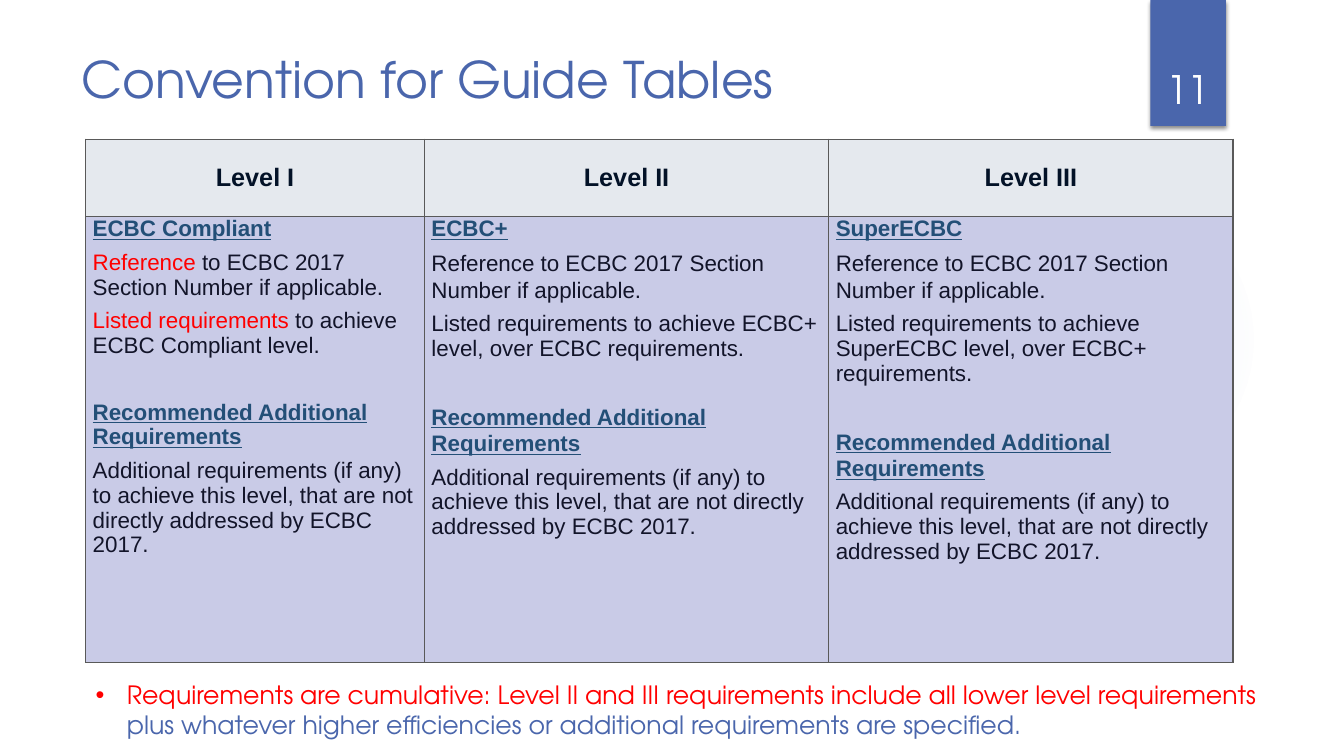
from lxml import etree
from pptx import Presentation
from pptx.dml.color import RGBColor
from pptx.enum.shapes import MSO_SHAPE
from pptx.enum.text import MSO_ANCHOR, PP_ALIGN
from pptx.oxml import parse_xml
from pptx.oxml.ns import qn
from pptx.util import Inches, Pt

RECT, OVAL = MSO_SHAPE.RECTANGLE, MSO_SHAPE.OVAL
MIDDLE, TOP, BOTTOM = MSO_ANCHOR.MIDDLE, MSO_ANCHOR.TOP, MSO_ANCHOR.BOTTOM
CENTER, LEFT = PP_ALIGN.CENTER, PP_ALIGN.LEFT
NS = 'xmlns:a="http://schemas.openxmlformats.org/drawingml/2006/main"'
THEME = {
    "display": "TeX Gyre Adventor", "body": "Arial",
    "title": 36, "number": 28, "head": 18, "note": 18, "cell": 16,
    "blue": "4A66AC", "white": "FFFFFF", "red": "FF0000", "glow": "5C64B7",
    "head_text": "031227", "section": "234F77", "ink": "121429",
    "head_fill": "E5E9EE", "cell_fill": "C9CBE7", "border": "595959",
}


def add_run(p, text, size, color, font="body", heading=False, underline=False):
    r = p.add_run()
    r.text = text
    r.font.size = Pt(THEME[size])
    r.font.name = THEME[font]
    r.font.bold = heading
    r.font.underline = underline
    r.font.color.rgb = RGBColor.from_string(THEME[color])


def add_box(s, left, top, width, height, anchor):
    tf = s.shapes.add_textbox(*map(Inches, (left, top, width, height))).text_frame
    tf.word_wrap = True
    tf.vertical_anchor = anchor
    return tf.paragraphs[0]


prs = Presentation()
prs.slide_width, prs.slide_height = Inches(13.33), Inches(7.5)
s = prs.slides.add_slide(prs.slide_layouts[6])

glow = s.shapes.add_shape(OVAL, *map(Inches, (9.41, 1.83, 3.08, 3.08)))
glow.shadow.inherit = False
glow.line.fill.background()
stops = "".join(
    f'<a:gs pos="{pos * 1000}"><a:srgbClr val="{THEME["glow"]}">'
    f'<a:alpha val="{alpha * 1000}"/></a:srgbClr></a:gs>'
    for pos, alpha in ((0, 7), (36, 6), (69, 0)))
glow._element.spPr.insert(2, parse_xml(
    f'<a:gradFill {NS}><a:gsLst>{stops}</a:gsLst><a:path path="circle">'
    '<a:fillToRect l="50000" t="50000" r="50000" b="50000"/></a:path></a:gradFill>'))

tab = s.shapes.add_shape(RECT, *map(Inches, (11.41, 0, 0.75, 1.25)))
tab.fill.solid()
tab.fill.fore_color.rgb = RGBColor.from_string(THEME["blue"])
tab.line.fill.background()
tab.shadow.inherit = False
tab._element.spPr.find(qn("a:effectLst")).append(parse_xml(
    f'<a:outerShdw {NS} blurRad="{Pt(3)}" dist="{Pt(2)}" dir="5400000" rotWithShape="0">'
    '<a:srgbClr val="000000"><a:alpha val="45000"/></a:srgbClr></a:outerShdw>'))

p = add_box(s, 0.71, 0.43, 10.29, 1.83, TOP)
add_run(p, "Convention for Guide Tables", "title", "blue", "display")
p = add_box(s, 11.32, 0.32, 0.92, 0.84, BOTTOM)
p.alignment = CENTER
add_run(p, "11", "number", "white", "display")

REFERENCE = ("Reference", " to ECBC 2017 Section Number if applicable.")
LISTED = "Listed requirements "
levels = [
    ("Level I", "ECBC Compliant", "to achieve ECBC Compliant level.", "red", 1.0),
    ("Level II", "ECBC+", "to achieve ECBC+ level, over ECBC requirements.", "ink", 1.07),
    ("Level III", "SuperECBC",
     "to achieve SuperECBC level, over ECBC+ requirements.", "ink", 1.07),
]
col_widths, row_heights = (3.36, 4.01, 4.01), (0.77, 4.42)
table = s.shapes.add_table(
    2, 3, Inches(0.85), Inches(1.38),
    Inches(sum(col_widths)), Inches(sum(row_heights))).table
table.first_row = table.horz_banding = False
for col, width in zip(table.columns, col_widths):
    col.width = Inches(width)
for row, height in zip(table.rows, row_heights):
    row.height = Inches(height)

for i, (level, name, goal, accent, spacing) in enumerate(levels):
    section = ("section", True, True)
    plain = ("ink", False, False)
    lead = (accent, False, False)
    paragraphs = [
        (0, 1.0, [(name, section)]),
        (6, spacing, [(REFERENCE[0], lead), (REFERENCE[1], plain)]),
        (6, 1.0, [(LISTED, lead), (goal, plain)]),
        (30, spacing, [("Recommended Additional Requirements", section)]),
        (6, 1.0, [("Additional requirements (if any) to achieve this level, "
                   "that are not directly addressed by ECBC 2017.", plain)]),
    ]
    head = [(0, 1.0, [(level, ("head_text", True, False))])]
    for j, (content, size, fill, anchor, align) in enumerate((
            (head, "head", "head_fill", MIDDLE, CENTER),
            (paragraphs, "cell", "cell_fill", TOP, LEFT))):
        cell = table.cell(j, i)
        cell.margin_left = cell.margin_right = Inches(0.07)
        cell.margin_top = cell.margin_bottom = 0
        cell.vertical_anchor = anchor
        for side in "LRTB":
            cell._tc.get_or_add_tcPr().append(parse_xml(
                f'<a:ln{side} {NS} w="{Pt(1)}"><a:solidFill>'
                f'<a:srgbClr val="{THEME["border"]}"/></a:solidFill></a:ln{side}>'))
        cell.fill.solid()
        cell.fill.fore_color.rgb = RGBColor.from_string(THEME[fill])
        tf = cell.text_frame
        for k, (before, line_spacing, runs) in enumerate(content):
            p = tf.add_paragraph() if k else tf.paragraphs[0]
            p.alignment = align
            p.space_before = Pt(before)
            p.line_spacing = line_spacing
            for text, (color, bold, underline) in runs:
                add_run(p, text, size, color, "body", bold, underline)

p = add_box(s, 0.85, 6.69, 12, 0.71, TOP)
pPr = p._p.get_or_add_pPr()
pPr.set("marL", str(Inches(0.31)))
pPr.set("indent", str(-Inches(0.31)))
etree.SubElement(pPr, qn("a:buFont"), typeface=THEME["body"])
etree.SubElement(pPr, qn("a:buChar"), char="•")
add_run(p, "Requirements are cumulative: Level II and III requirements include "
           "all lower level requirements ", "note", "red", "display")
add_run(p, "plus whatever higher efficiencies or additional requirements are specified.",
        "note", "blue", "display")

prs.save("out.pptx")
